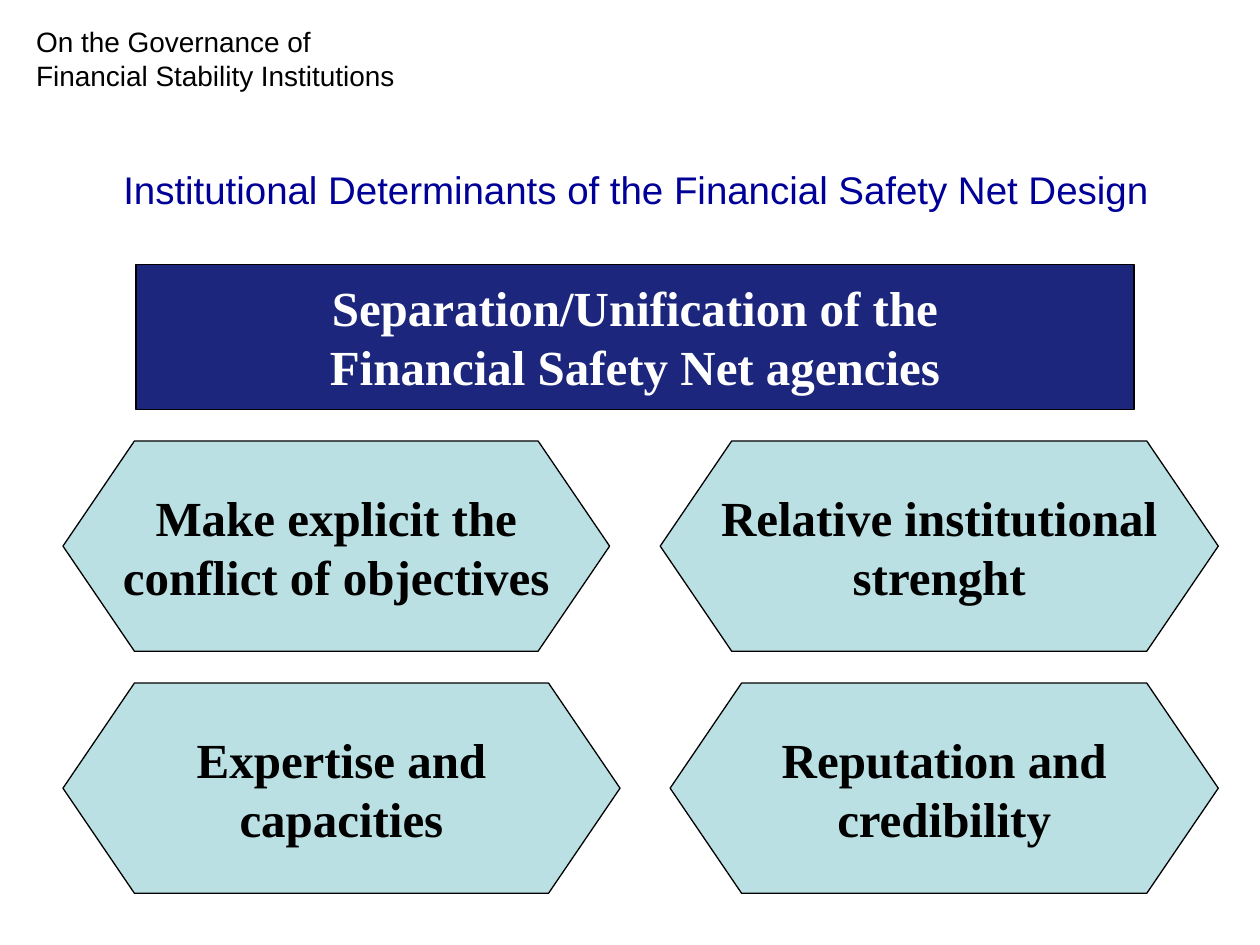
from dataclasses import dataclass

from pptx import Presentation
from pptx import util as u
from pptx.dml.color import RGBColor
from pptx.enum import shapes, text

COLOURS = {
    "navy": "1C267D",
    "aqua": "BBE0E3",
    "title": "000099",
    "black": "000000",
    "white": "FFFFFF",
}
SERIF, SANS = "Times New Roman", "Arial"
LEFT_EDGE, RIGHT_EDGE = 1.27, 24.56
TOP_ROW, BOTTOM_ROW = 8.89, 13.77
HEXAGON_HEIGHT = 4.24


@dataclass
class Style:
    font: str
    size: int
    colour: str
    bold: bool = False
    align: text.PP_ALIGN = text.PP_ALIGN.CENTER


@dataclass
class Box:
    """A filled shape; lengths are in centimetres."""
    lines: str
    left: float
    top: float
    width: float
    height: float
    fill: str
    style: Style
    kind: shapes.MSO_SHAPE
    point: float | None = None


def colour(name: str) -> RGBColor:
    return RGBColor.from_string(COLOURS[name])


def write(text_frame, content: str, style: Style) -> None:
    text_frame.text = content
    for paragraph in text_frame.paragraphs:
        paragraph.alignment = style.align
        for run in paragraph.runs:
            run.font.name = style.font
            run.font.size = u.Pt(style.size)
            run.font.bold = style.bold
            run.font.color.rgb = colour(style.colour)


def draw_box(slide, box: Box) -> None:
    lengths = map(u.Cm, (box.left, box.top, box.width, box.height))
    shape = slide.shapes.add_shape(box.kind, *lengths)
    if box.point is not None:
        shape.adjustments[0] = box.point
    shape.shadow.inherit = False
    shape.fill.solid()
    shape.fill.fore_color.rgb = colour(box.fill)
    shape.line.color.rgb = colour("black")
    shape.line.width = u.Pt(0.75)
    shape.text_frame.word_wrap = False
    shape.text_frame.vertical_anchor = text.MSO_ANCHOR.MIDDLE
    write(shape.text_frame, box.lines, box.style)


def add_text(slide, content: str, left: float, top: float, width: float,
             height: float, style: Style):
    shape = slide.shapes.add_textbox(*map(u.Cm, (left, top, width, height)))
    shape.text_frame.word_wrap = True
    write(shape.text_frame, content, style)
    return shape.text_frame


def hexagon(lines: str, left: float, top: float, width: float,
            point: float) -> Box:
    return Box(lines, left, top, width, HEXAGON_HEIGHT, "aqua",
               Style(SERIF, 28, "black", bold=True),
               shapes.MSO_SHAPE.HEXAGON, point)


def main() -> None:
    presentation = Presentation()
    presentation.slide_width = u.Cm(25.4)
    presentation.slide_height = u.Cm(19.05)
    slide = presentation.slides.add_slide(presentation.slide_layouts[6])

    # Banner and the four determinants below it
    boxes = [
        Box("Separation/Unification of the\nFinancial Safety Net agencies",
            2.74, 5.33, 20.12, 2.92, "navy",
            Style(SERIF, 28, "white", bold=True), shapes.MSO_SHAPE.RECTANGLE),
        hexagon("Relative institutional\nstrenght",
                RIGHT_EDGE - 11.25, TOP_ROW, 11.25, 0.34),
        hexagon("Reputation and\ncredibility",
                RIGHT_EDGE - 11.05, BOTTOM_ROW, 11.05, 0.34),
        hexagon("Expertise and\ncapacities",
                LEFT_EDGE, BOTTOM_ROW, 11.23, 0.34),
        hexagon("Make explicit the\nconflict of objectives",
                LEFT_EDGE, TOP_ROW, 11.02, 0.34),
    ]
    for box in boxes:
        draw_box(slide, box)

    # Title
    title = add_text(
        slide, "Institutional Determinants of the Financial Safety Net Design",
        1.07, 3.07, 23.5, 1.45, Style(SANS, 22, "title"))
    title.vertical_anchor = text.MSO_ANCHOR.BOTTOM
    title.margin_bottom = u.Cm(0.25)

    # Running header
    header = add_text(
        slide, "On the Governance of Financial Stability Institutions",
        0.48, 0.38, 8.3, 1.63,
        Style(SANS, 16, "black", align=text.PP_ALIGN.LEFT))
    header.auto_size = text.MSO_AUTO_SIZE.SHAPE_TO_FIT_TEXT

    presentation.save("out.pptx")


if __name__ == "__main__":
    main()
